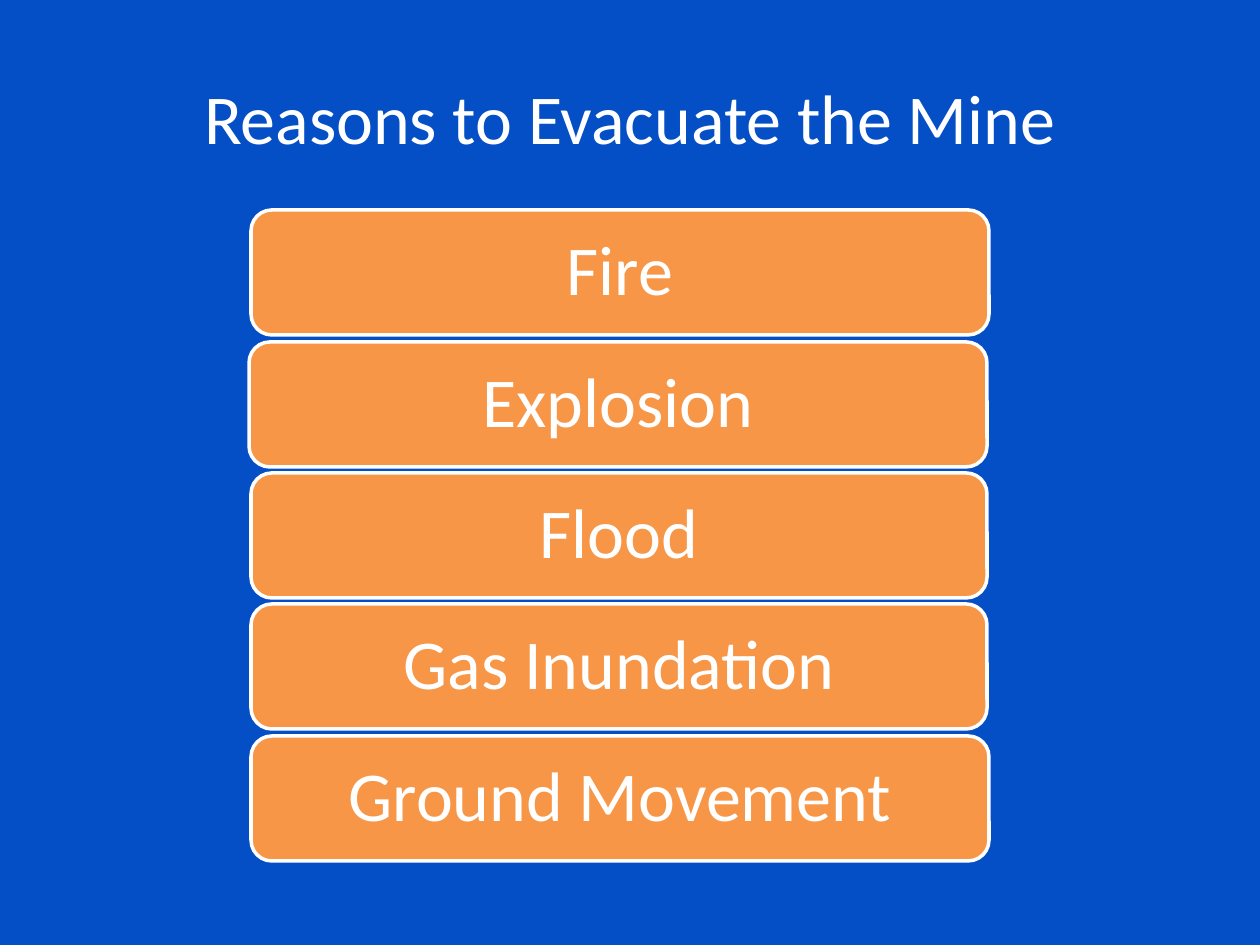
from pptx import Presentation, util as u
from pptx.dml.color import RGBColor
from pptx.enum import shapes, text

PX = u.Inches(1) / 126
BLUE, ORANGE, WHITE = "044EC6", "F79646", "FFFFFF"
# Each reason with the left edge and width of its bar
REASONS = [
    ("Fire", 251, 738),
    ("Explosion", 249, 738),
    ("Flood", 251, 736),
    ("Gas Inundation", 251, 736),
    ("Ground Movement", 251, 738),
]
FIRST_TOP, LAST_TOP, BAR_HEIGHT = 210, 736, 125


def px(*lengths):
    return [u.Emu(round(n * PX)) for n in lengths]


def rgb(value):
    return RGBColor.from_string(value)


def write(sp, content, size=40, color=WHITE, font="Calibri", spacing=None, margins=(13, 6)):
    """Put one centred line of text in a shape."""
    tf = sp.text_frame
    tf.word_wrap = True
    tf.vertical_anchor = text.MSO_ANCHOR.MIDDLE
    side, end = px(*margins)
    tf.margin_left = tf.margin_right = side
    tf.margin_top = tf.margin_bottom = end
    p = tf.paragraphs[0]
    p.alignment = text.PP_ALIGN.CENTER
    p.line_spacing = spacing
    r = p.add_run()
    r.text = content
    r.font.size = u.Pt(size)
    r.font.name = font
    r.font.color.rgb = rgb(color)


class SlideBuilder:
    def __init__(self, prs, background):
        self.s = prs.slides.add_slide(prs.slide_layouts[6])
        fill = self.s.background.fill
        fill.solid()
        fill.fore_color.rgb = rgb(background)

    def title(self, content, *box):
        write(self.s.shapes.add_textbox(*px(*box)), content)

    def bar(self, content, *box, fill=ORANGE, line=WHITE):
        sp = self.s.shapes.add_shape(shapes.MSO_SHAPE.ROUNDED_RECTANGLE, *px(*box))
        sp.shadow.inherit = False
        sp.fill.solid()
        sp.fill.fore_color.rgb = rgb(fill)
        sp.line.color.rgb = rgb(line)
        sp.line.width = u.Pt(2)
        write(sp, content, spacing=0.9, margins=(21, 10))


def main():
    prs = Presentation()
    prs.slide_width, prs.slide_height = px(1260, 945)
    slide = SlideBuilder(prs, BLUE)
    slide.title("Reasons to Evacuate the Mine", 63, 38, 1134, 157)
    pitch = (LAST_TOP - FIRST_TOP) / (len(REASONS) - 1)
    for i, (reason, left, width) in enumerate(REASONS):
        slide.bar(reason, left, round(FIRST_TOP + i * pitch), width, BAR_HEIGHT)
    prs.save("out.pptx")


if __name__ == "__main__":
    main()
